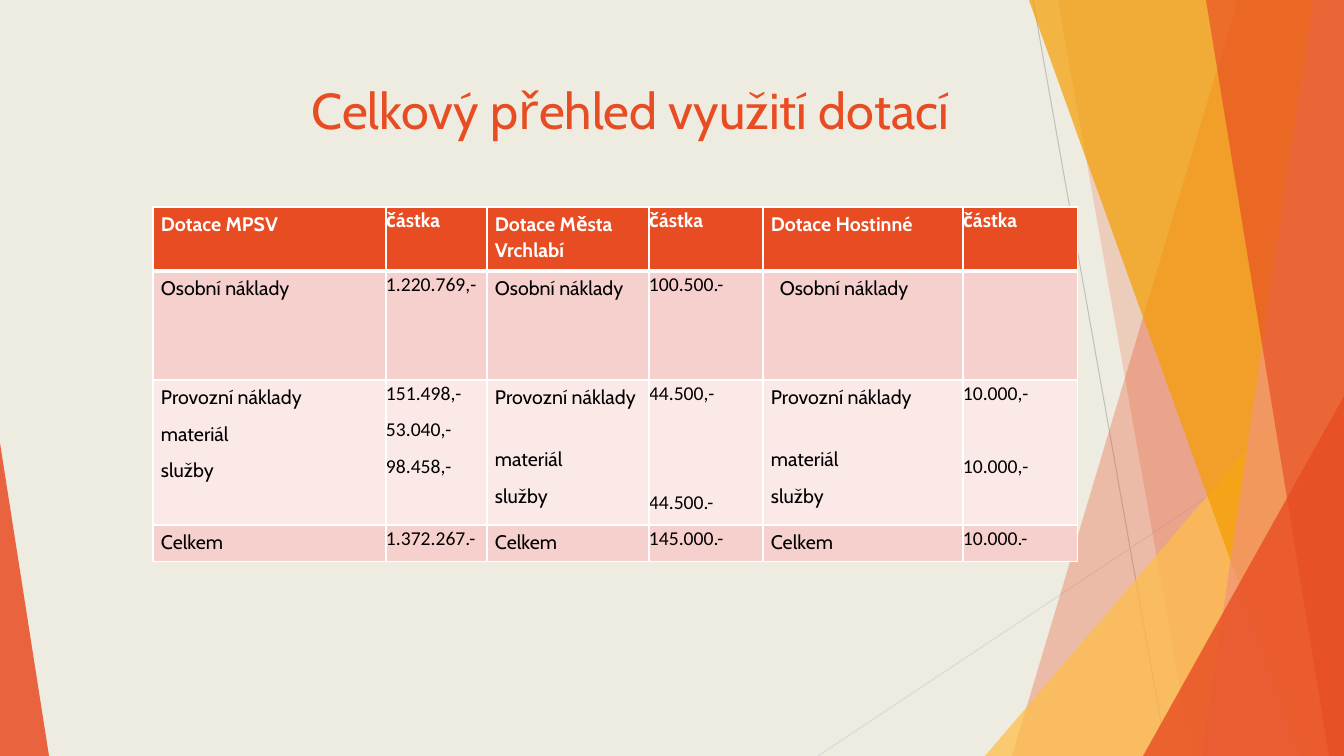
from collections import namedtuple
from dataclasses import dataclass

import lxml.etree
import pptx
import pptx.dml.color
import pptx.enum.shapes
import pptx.enum.text
import pptx.oxml.ns
import pptx.util

EMU_PER_PX = 914400 / 100.8
Box = namedtuple("Box", "left top width height")
qn = pptx.oxml.ns.qn


@dataclass(frozen=True)
class Theme:
    background: str = "EEECE1"
    accent: str = "E84C22"
    amber: str = "F49D00"
    yellow: str = "FFBD47"
    salmon: str = "F1947A"
    dark_line: str = "BFBFBF"
    light_line: str = "D9D9D9"
    band_dark: str = "F6D0CD"
    band_light: str = "FBE9E8"
    white: str = "FFFFFF"
    black: str = "000000"
    font: str = "Cabin"
    amount_font: str = "Calibri"
    title_size: int = 36
    table_size: int = 14
    line_spacing: float = 1.07
    space_after: int = 8


THEME = Theme()

SLIDE = Box(0, 0, 1344, 756)
TITLE = Box(143, 74, 975, 115)
TABLE = Box(153, 207, 925, 355)

COLUMNS = [233, 101, 162, 114, 200, 115]
ROWS = [64, 109, 145, 37]
BLANK_LINE = 18  # points
SKIPPED_AMOUNT = 26  # points

# A cell is a list of (text, space before in points).
COSTS = [("Provozní náklady", 0), ("materiál", BLANK_LINE), ("služby", 0)]
GRANTS = [
    [[("Dotace MPSV", 0)], [("částka", 0)],
     [("Dotace Města Vrchlabí", 0)], [("částka", 0)],
     [("Dotace Hostinné", 0)], [("částka", 0)]],
    [[("Osobní náklady", 0)], [("1.220.769,-", 0)],
     [("Osobní náklady", 0)], [("100.500.-", 0)],
     [("Osobní náklady", 0)], []],
    [[("Provozní náklady", 0), ("materiál", 0), ("služby", 0)],
     [("151.498,-", 0), ("53.040,-", 0), ("98.458,-", 0)],
     COSTS, [("44.500,-", 0), ("44.500.-", 2 * SKIPPED_AMOUNT)],
     COSTS, [("10.000,-", 0), ("10.000,-", SKIPPED_AMOUNT)]],
    [[("Celkem", 0)], [("1.372.267.-", 0)],
     [("Celkem", 0)], [("145.000.-", 0)],
     [("Celkem", 0)], [("10.000.-", 0)]],
]
INDENTED_CELL = (1, 4)


def px(n):
    return pptx.util.Emu(round(n * EMU_PER_PX))


def rgb(value):
    return pptx.dml.color.RGBColor.from_string(value)


def paint(sp, color, opacity):
    sp.shadow.inherit = False
    sp.line.fill.background()
    sp.fill.solid()
    sp.fill.fore_color.rgb = rgb(color)
    clr = sp.fill._xPr.find(qn("a:solidFill"))[0]
    lxml.etree.SubElement(clr, qn("a:alpha"), val=str(opacity * 1000))


def add_hairline(s, box, start, end, color):
    line = s.shapes.add_connector(
        pptx.enum.shapes.MSO_CONNECTOR.STRAIGHT,
        px(box.left + start[0]), px(box.top + start[1]),
        px(box.left + end[0]), px(box.top + end[1]))
    line.line.color.rgb = rgb(color)
    line.line.width = pptx.util.Pt(0.75)
    lxml.etree.SubElement(line._element.spPr, qn("a:effectLst"))


def add_panel(s, box, top_x, bottom_x, color, opacity):
    """Fill from a slanted left edge to the right side of the box."""
    fb = s.shapes.build_freeform(top_x, 0, scale=EMU_PER_PX)
    fb.add_line_segments([(box.width, 0), (box.width, box.height),
                          (bottom_x, box.height)], close=True)
    paint(fb.convert_to_shape(px(box.left), px(box.top)), color, opacity)


def add_triangle(s, box, left, width, height, apex, color, opacity):
    """Stand a triangle on the bottom of the box, apex from 0 to 1."""
    sp = s.shapes.add_shape(
        pptx.enum.shapes.MSO_SHAPE.ISOSCELES_TRIANGLE,
        px(box.left + left), px(box.top + box.height - height),
        px(width), px(height))
    sp.adjustments[0] = apex
    paint(sp, color, opacity)


def add_facets(s, box):
    t = THEME
    add_hairline(s, box, (1033, 0), (1167, box.height), t.dark_line)
    add_hairline(s, box, (box.width, 406), (818, box.height), t.light_line)
    add_panel(s, box, 1238, 1012, t.accent, 30)
    add_panel(s, box, 1058, 1192, t.accent, 20)
    add_triangle(s, box, 985, 359, 420, 1, t.yellow, 72)
    add_panel(s, box, 1029, 1301, t.amber, 70)
    add_panel(s, box, 1313, 1202, t.salmon, 70)
    add_panel(s, box, 1206, 1329, t.accent, 65)
    add_triangle(s, box, 1143, 201, 360, 1, t.accent, 80)
    add_triangle(s, box, 0, 49, 313, 0, t.accent, 85)


def add_title(s, box, text):
    title = s.shapes.title
    title.left, title.top, title.width, title.height = map(px, box)
    tf = title.text_frame
    tf.text = text
    tf.word_wrap = True
    tf.vertical_anchor = pptx.enum.text.MSO_ANCHOR.TOP
    p = tf.paragraphs[0]
    p.alignment = pptx.enum.text.PP_ALIGN.CENTER
    p.font.name = THEME.font
    p.font.size = pptx.util.Pt(THEME.title_size)
    p.font.color.rgb = rgb(THEME.accent)


def set_borders(cell, row):
    widths = {"L": 1, "R": 1, "T": 3 if row == 1 else 1, "B": 3 if row == 0 else 1}
    for side, width in widths.items():
        ln = lxml.etree.SubElement(cell._tc.get_or_add_tcPr(), qn("a:ln" + side),
                                   w=str(pptx.util.Pt(width)))
        fill = lxml.etree.SubElement(ln, qn("a:solidFill"))
        lxml.etree.SubElement(fill, qn("a:srgbClr"), val=THEME.white)


def fill_cell(cell, row, col, lines):
    header, amount = row == 0, col % 2 == 1
    side, edge = (0, 0) if amount else (8, 4)
    cell.margin_left = px(side + 9 if (row, col) == INDENTED_CELL else side)
    cell.margin_right = px(side)
    cell.margin_top = cell.margin_bottom = px(edge)
    set_borders(cell, row)
    band = THEME.band_dark if row % 2 else THEME.band_light
    cell.fill.solid()
    cell.fill.fore_color.rgb = rgb(THEME.accent if header else band)
    tf = cell.text_frame
    tf.text = "\n".join(text for text, _ in lines)
    for p, (_, space_before) in zip(tf.paragraphs, lines):
        p.line_spacing = THEME.line_spacing
        p.space_before = pptx.util.Pt(space_before)
        p.space_after = pptx.util.Pt(THEME.space_after)
        p.font.name = THEME.amount_font if amount and not header else THEME.font
        p.font.size = pptx.util.Pt(THEME.table_size)
        p.font.bold = header
        p.font.color.rgb = rgb(THEME.white if header else THEME.black)


def add_grants_table(s, box, grants):
    table = s.shapes.add_table(len(ROWS), len(COLUMNS), *map(px, box)).table
    table.horz_banding = False
    for column, width in zip(table.columns, COLUMNS):
        column.width = px(width)
    for row, height in zip(table.rows, ROWS):
        row.height = px(height)
    for i, cells in enumerate(grants):
        for j, lines in enumerate(cells):
            fill_cell(table.cell(i, j), i, j, lines)


def main():
    prs = pptx.Presentation()
    prs.slide_width, prs.slide_height = px(SLIDE.width), px(SLIDE.height)
    s = prs.slides.add_slide(prs.slide_layouts[5])
    s.background.fill.solid()
    s.background.fill.fore_color.rgb = rgb(THEME.background)
    add_facets(s, SLIDE)
    add_title(s, TITLE, "Celkový přehled využití dotací")
    add_grants_table(s, TABLE, GRANTS)
    prs.save("out.pptx")


if __name__ == "__main__":
    main()
